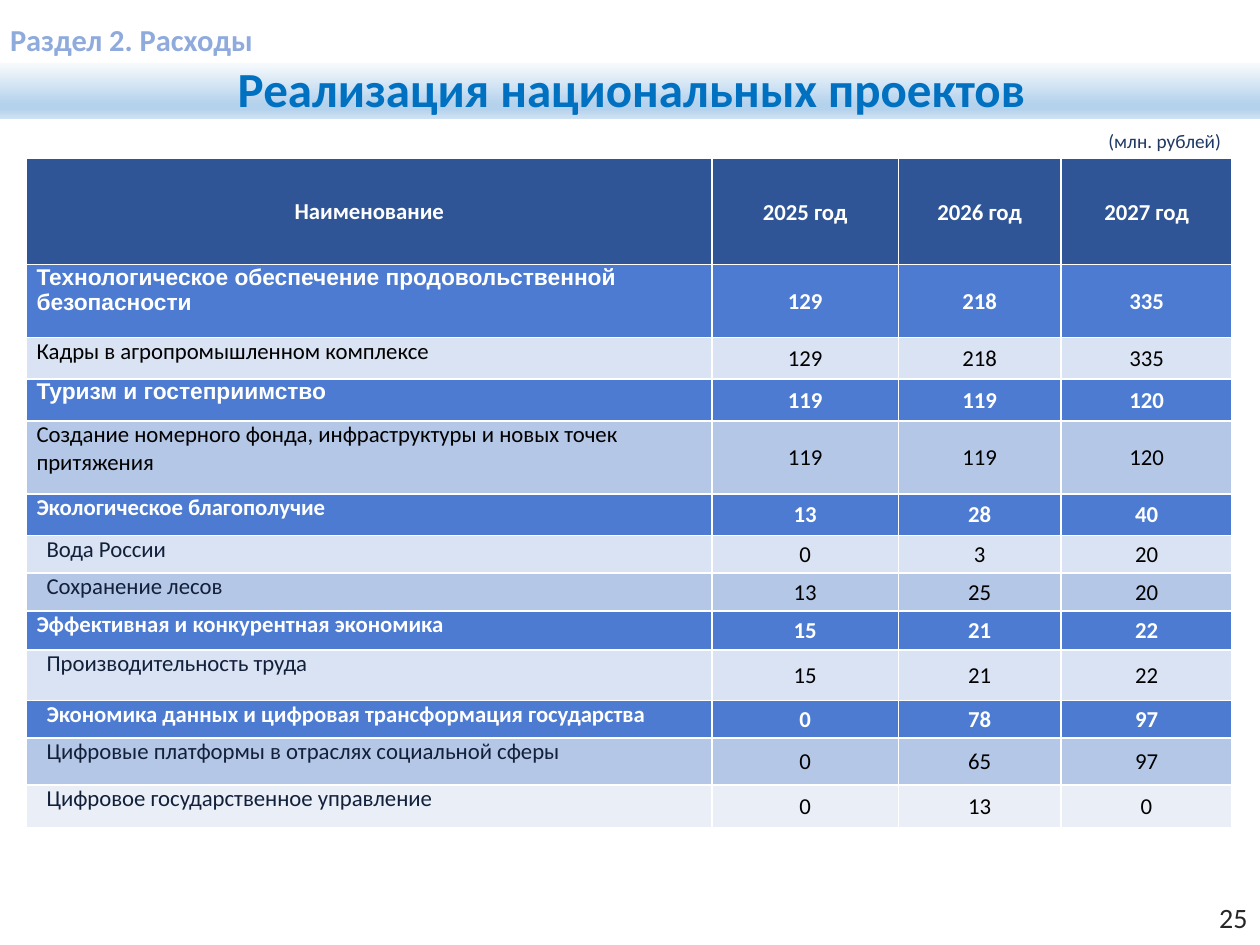
"""Build the slide on spending for national projects."""
from typing import NamedTuple

from lxml import etree
from pptx import Presentation
from pptx.dml import color
from pptx.enum import shapes, text
from pptx.oxml import ns
from pptx.util import Inches, Pt

FONT = "Calibri"
WHITE, BLACK, NAVY = "FFFFFF", "000000", "12203A"
HEAD, BLUE, MID, PALE, FAINT = "2F5597", "4C7BD1", "B4C7E7", "DAE3F3", "EAEFF7"
LEFT, CENTER, RIGHT, JUST = (
    text.PP_ALIGN.LEFT, text.PP_ALIGN.CENTER, text.PP_ALIGN.RIGHT, text.PP_ALIGN.JUSTIFY)
COLS = (5.44, 1.48, 1.29, 1.36)
STOPS = ((0, "F7FAFD"), (74, "B5D2EC"), (83, "B5D2EC"), (100, "CEE1F2"))


class Row(NamedTuple):
    """One table row: its label, yearly values and look."""
    label: str
    vals: tuple
    high: float
    fill: str = BLUE
    ink: str = WHITE
    indent: float = 0.08
    font: str = FONT
    align: int = LEFT


ROWS = (
    Row("Наименование", ("2025 год", "2026 год", "2027 год"), 0.84, HEAD, indent=0, align=CENTER),
    Row("Технологическое обеспечение продовольственной безопасности",
        (129, 218, 335), 0.58, font="Arial"),
    Row("Кадры в агропромышленном комплексе", (129, 218, 335), 0.33, PALE, BLACK),
    Row("Туризм и гостеприимство", (119, 119, 120), 0.33, font="Arial"),
    Row("Создание номерного фонда, инфраструктуры и новых точек притяжения",
        (119, 119, 120), 0.58, MID, BLACK),
    Row("Экологическое благополучие", (13, 28, 40), 0.33),
    Row("Вода России", (0, 3, 20), 0.3, PALE, NAVY, 0.16),
    Row("Сохранение лесов", (13, 25, 20), 0.3, MID, NAVY, 0.16),
    Row("Эффективная и конкурентная экономика", (15, 21, 22), 0.31),
    Row("Производительность труда", (15, 21, 22), 0.4, PALE, NAVY, 0.16),
    Row("Экономика данных и цифровая трансформация государства",
        (0, 78, 97), 0.3, indent=0.16),
    Row("Цифровые платформы в отраслях социальной сферы", (0, 65, 97), 0.37, MID, NAVY, 0.16),
    Row("Цифровое государственное управление", (0, 13, 0), 0.34, FAINT, NAVY, 0.16),
)


def rgb(code: str) -> color.RGBColor:
    return color.RGBColor.from_string(code)


def write(frame, words: str, *, size: float, ink: str, bold: bool = False, font: str = FONT,
          align: int = LEFT, indent: float = 0, lines: float = 1, base: int = 0) -> None:
    para = frame.paragraphs[0]
    para.alignment = align
    para.line_spacing = lines
    props = para._p.get_or_add_pPr()
    props.set("marL", str(Inches(indent)))
    props.set("indent", "0")
    run = para.add_run()
    run.text = words
    run.font.size, run.font.name, run.font.bold = Pt(size), font, bold
    run.font.color.rgb = rgb(ink)
    if base:
        run._r.get_or_add_rPr().set("baseline", str(base * 1000))


def pad(item, left: float, top: float, right: float, low: float) -> None:
    item.margin_left, item.margin_top = Inches(left), Inches(top)
    item.margin_right, item.margin_bottom = Inches(right), Inches(low)


def label(slide, place: tuple, words: str, pads: tuple = (0, 0, 0, 0), **look) -> None:
    frame = slide.shapes.add_textbox(*map(Inches, place)).text_frame
    frame.word_wrap = True
    pad(frame, *pads)
    write(frame, words, **look)


def banner(slide, words: str) -> None:
    band = slide.shapes.add_shape(
        shapes.MSO_SHAPE.RECTANGLE, Inches(0), Inches(0.5), Inches(10), Inches(0.44))
    band.shadow.inherit = False
    band.line.fill.background()
    band.fill.gradient()
    band.fill.gradient_angle = 270
    stops = band._element.spPr.find(".//" + ns.qn("a:gsLst"))
    for old in list(stops):
        stops.remove(old)
    for spot, code in STOPS:
        stop = etree.SubElement(stops, ns.qn("a:gs"), pos=str(spot * 1000))
        etree.SubElement(stop, ns.qn("a:srgbClr"), val=code)
    frame = band.text_frame
    frame.word_wrap = True
    frame.vertical_anchor = text.MSO_ANCHOR.TOP
    pad(frame, 0, 0.02, 0, 0)
    write(frame, words, size=28, ink="0070C0", bold=True, align=CENTER, indent=0.02, lines=0.9)


def paint(cell, fill: str) -> None:
    props = cell._tc.get_or_add_tcPr()
    for side in ("lnL", "lnR", "lnT", "lnB"):
        edge = etree.SubElement(props, ns.qn("a:" + side), w=str(Pt(1)))
        solid = etree.SubElement(edge, ns.qn("a:solidFill"))
        etree.SubElement(solid, ns.qn("a:srgbClr"), val=WHITE)
    cell.fill.solid()
    cell.fill.fore_color.rgb = rgb(fill)


def fill_row(cells, row: Row) -> None:
    bold = row.ink == WHITE
    for spot, (cell, words) in enumerate(zip(cells, (row.label, *row.vals))):
        paint(cell, row.fill)
        if spot:
            pad(cell, 0.01, 0.01, 0.01, 0)
            look = dict(ink=WHITE if bold else BLACK, align=CENTER)
        else:
            pad(cell, 0, 0, 0, 0)
            look = dict(ink=row.ink, align=row.align, indent=row.indent, font=row.font)
        middle = spot or row.fill == HEAD
        cell.vertical_anchor = text.MSO_ANCHOR.MIDDLE if middle else text.MSO_ANCHOR.TOP
        write(cell.text_frame, str(words), size=13, bold=bold, **look)


def budget(slide) -> None:
    high = sum(row.high for row in ROWS)
    table = slide.shapes.add_table(
        len(ROWS), len(COLS), Inches(0.21), Inches(1.26), Inches(sum(COLS)), Inches(high)).table
    table.first_row = table.horz_banding = False
    for col, wide in zip(table.columns, COLS):
        col.width = Inches(wide)
    for line, row in zip(table.rows, ROWS):
        line.height = Inches(row.high)
        fill_row(line.cells, row)


def main() -> None:
    deck = Presentation()
    deck.slide_width, deck.slide_height = Inches(10), Inches(7.5)
    slide = deck.slides.add_slide(deck.slide_layouts[6])
    label(slide, (7.41, 7.15, 2.49, 0.27), "25", size=16, ink="262626", align=RIGHT)
    label(slide, (7.22, 0.98, 2.57, 0.29), "(млн. рублей)", (0.1, 0.05, 0.1, 0.05),
          size=11, ink="203864", align=RIGHT)
    banner(slide, "Реализация национальных проектов")
    label(slide, (0, 0.04, 10, 0.47), "Раздел 2. Расходы", (0, 0.02, 0, 0), size=30,
          ink="8FAADC", bold=True, align=JUST, indent=0.08, lines=0.9, base=3)
    budget(slide)
    deck.save("out.pptx")


if __name__ == "__main__":
    main()
